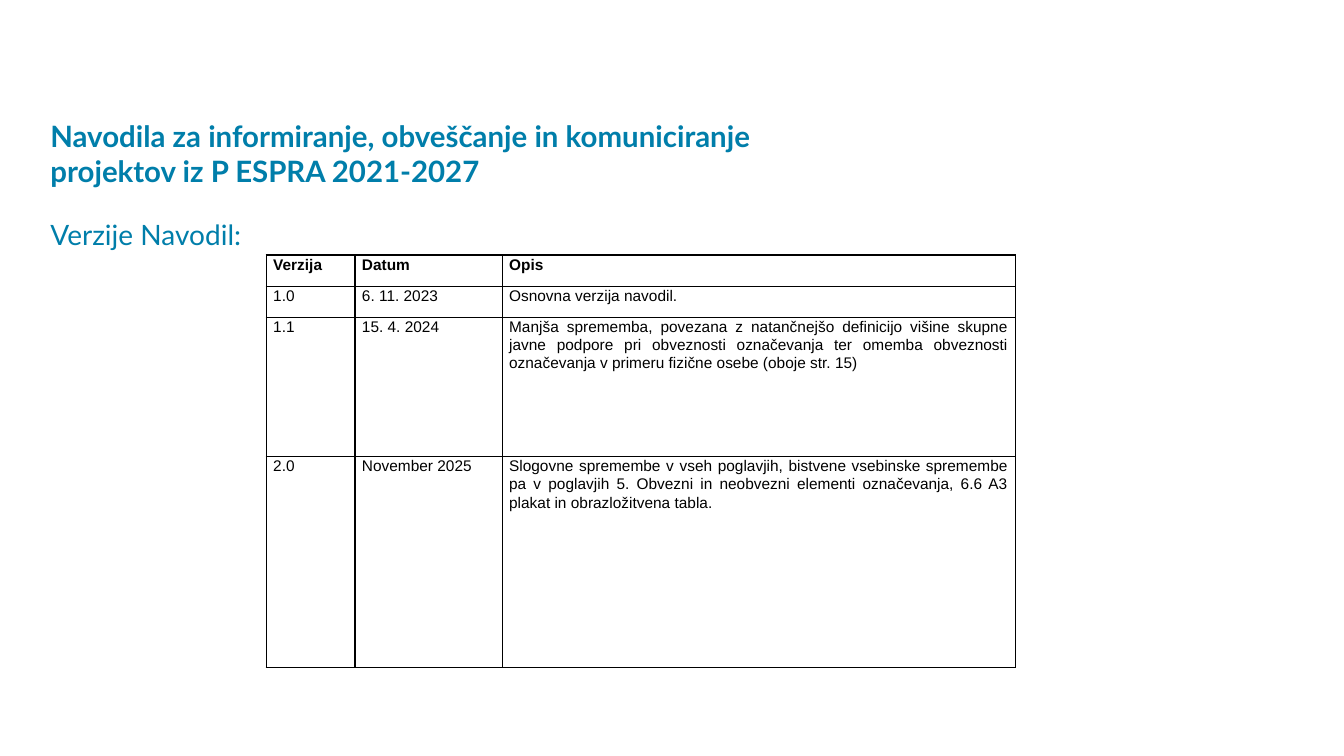
from dataclasses import dataclass

from lxml.etree import SubElement as Sub
from pptx import Presentation
from pptx.dml.color import RGBColor as Rgb
from pptx.enum.text import MSO_ANCHOR as Anchor, MSO_AUTO_SIZE as Fit, PP_ALIGN as Align
from pptx.oxml.ns import qn
from pptx.util import Pt

PX = 9144  # 100 px to the inch


@dataclass(frozen=True)
class Theme:
    blue: str = "007EAA"
    black: str = "000000"
    head: str = "Lato"
    text: str = "Arial"
    title: int = 21
    sub: int = 20
    cell: int = 11
    lead: int = 13
    line: int = 1


THEME = Theme()
COLS = [88, 146, 509]
ROWS = [31, 31, 138, 209]
DATA = [
    ["Verzija", "Datum", "Opis"],
    ["1.0", "6. 11. 2023", "Osnovna verzija navodil."],
    ["1.1", "15. 4. 2024",
     "Manjša sprememba, povezana z natančnejšo definicijo višine skupne javne "
     "podpore pri obveznosti označevanja ter omemba obveznosti označevanja "
     "v primeru fizične osebe (oboje str. 15)"],
    ["2.0", "November 2025",
     "Slogovne spremembe v vseh poglavjih, bistvene vsebinske spremembe pa v "
     "poglavjih 5. Obvezni in neobvezni elementi označevanja, 6.6 A3 plakat "
     "in obrazložitvena tabla."],
]


def style(para, font, size, color, bold=False):
    for run in para.runs:
        run.font.name = font
        run.font.size = Pt(size)
        run.font.bold = bold
        run.font.color.rgb = Rgb.from_string(color)


def heading(shape, box, text, size, align, bold=False):
    """Fill a placeholder with one blue heading."""
    shape.left, shape.top, shape.width, shape.height = (v * PX for v in box)
    frame = shape.text_frame
    frame.text = text
    frame.word_wrap = True
    frame.auto_size = Fit.NONE
    frame.vertical_anchor = Anchor.TOP
    para = frame.paragraphs[0]
    # No bullet or hanging indent
    props = para._p.get_or_add_pPr()
    props.set("marL", "0")
    props.set("indent", "0")
    Sub(props, qn("a:buNone"))
    para.alignment = align
    para.space_before = Pt(0)
    style(para, THEME.head, size, THEME.blue, bold)


def border(cell):
    props = cell._tc.get_or_add_tcPr()
    for side in "LRTB":
        line = Sub(props, qn(f"a:ln{side}"), w=str(Pt(THEME.line)))
        fill = Sub(line, qn("a:solidFill"))
        Sub(fill, qn("a:srgbClr"), val=THEME.black)


def versions(slide, box):
    """Draw the table of versions."""
    frame = slide.shapes.add_table(len(ROWS), len(COLS), *(v * PX for v in box))
    table = frame.table
    table.first_row = table.horz_banding = False
    for col, width in zip(table.columns, COLS):
        col.width = width * PX
    for row, height in zip(table.rows, ROWS):
        row.height = height * PX
    for r, texts in enumerate(DATA):
        for c, text in enumerate(texts):
            cell = table.cell(r, c)
            cell.margin_left = cell.margin_right = 7 * PX
            cell.margin_top = cell.margin_bottom = 0
            border(cell)
            cell.fill.background()
            cell.text_frame.text = text
            para = cell.text_frame.paragraphs[0]
            para.alignment = Align.JUSTIFY
            para.line_spacing = Pt(THEME.lead)
            style(para, THEME.text, THEME.cell, THEME.black, r == 0)


def main():
    deck = Presentation()
    deck.slide_width, deck.slide_height = 1333 * PX, 750 * PX
    slide = deck.slides.add_slide(deck.slide_layouts[1])
    title, body = slide.placeholders
    # Headings
    heading(body, (40, 211, 993, 112), "Verzije Navodil:", THEME.sub, Align.JUSTIFY)
    heading(title, (40, 112, 819, 116),
            "Navodila za informiranje, obveščanje in komuniciranje "
            "projektov iz P ESPRA 2021-2027", THEME.title, Align.LEFT, True)
    # Table
    versions(slide, (264, 253, sum(COLS), sum(ROWS)))
    deck.save("out.pptx")


if __name__ == "__main__":
    main()
